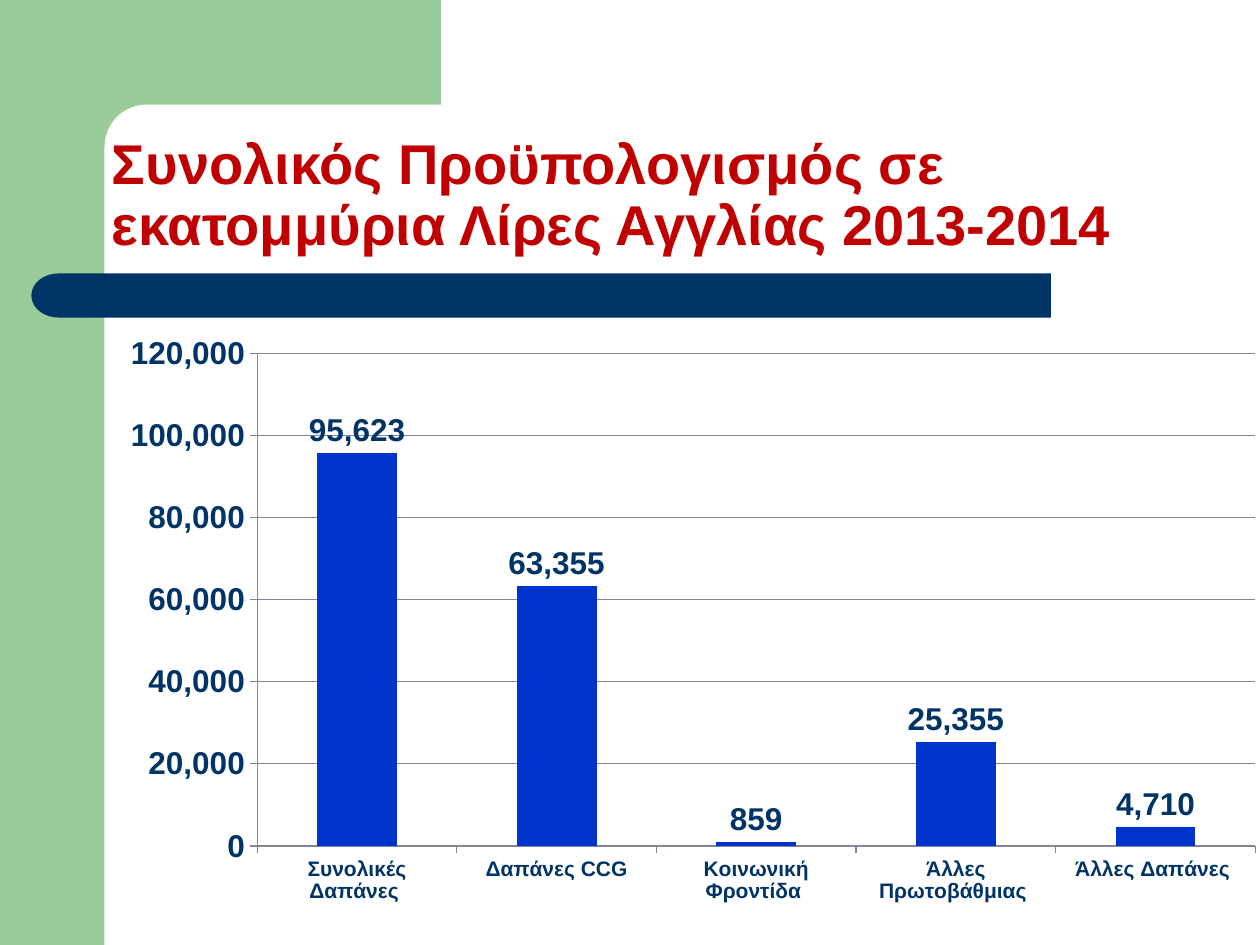
from lxml.etree import SubElement
from pptx import Presentation
from pptx.chart.data import CategoryChartData
from pptx.dml.color import RGBColor
from pptx.enum.chart import XL_CHART_TYPE, XL_LABEL_POSITION, XL_TICK_MARK
from pptx.enum.shapes import MSO_SHAPE
from pptx.enum.text import MSO_ANCHOR, PP_ALIGN
from pptx.oxml.ns import qn
from pptx.util import Inches, Pt

COLORS = {
    "green": "99CC99",
    "white": "FFFFFF",
    "navy": "003366",
    "red": "C00000",
    "blue": "0033CC",
    "gray": "83839B",
}


def tint(name):
    return RGBColor.from_string(COLORS[name])


def apply(item, **values):
    for key, value in values.items():
        setattr(item, key, value)


class Deck:
    def __init__(self, face):
        self.face = face
        self.show = Presentation()
        apply(self.show, slide_width=Inches(10), slide_height=Inches(7.5))
        self.slide = self.show.slides.add_slide(self.show.slide_layouts[6])

    def font(self, font, size, color):
        apply(font, name=self.face, size=Pt(size), bold=True)
        font.color.rgb = tint(color)

    def line(self, form):
        form.line.color.rgb = tint("gray")
        form.line.width = Pt(0.75)

    def shape(self, kind, box, color, round=None, flip=False):
        shape = self.slide.shapes.add_shape(kind, *map(Inches, box))
        shape.shadow.inherit = False
        shape.fill.solid()
        shape.fill.fore_color.rgb = tint(color)
        shape.line.fill.background()
        if round is not None:
            shape.adjustments[0] = round
        if flip:
            shape._element.spPr.xfrm.set("flipH", "1")

    def title(self, box, text):
        frame = self.slide.shapes.add_textbox(*map(Inches, box)).text_frame
        apply(frame, word_wrap=True, vertical_anchor=MSO_ANCHOR.BOTTOM)
        para = frame.paragraphs[0]
        apply(para, text=text, line_spacing=0.9, alignment=PP_ALIGN.LEFT)
        self.font(para.runs[0].font, 32, "red")

    def chart(self, box, name, names, values, plot_box):
        data = CategoryChartData(number_format="#,##0")
        data.categories = names
        data.add_series(name, values)
        frame = self.slide.shapes.add_chart(
            XL_CHART_TYPE.COLUMN_CLUSTERED, *map(Inches, box), data
        )
        chart = frame.chart
        apply(chart, has_legend=False, has_title=False)
        self.font(chart.font, 18, "navy")
        for axis, size in ((chart.category_axis, 12), (chart.value_axis, 18)):
            apply(axis, major_tick_mark=XL_TICK_MARK.OUTSIDE,
                  minor_tick_mark=XL_TICK_MARK.NONE)
            self.font(axis.tick_labels.font, size, "navy")
            self.line(axis.format)
        apply(axis, minimum_scale=0, maximum_scale=120000, major_unit=20000,
              has_major_gridlines=True)
        self.line(axis.major_gridlines.format)
        apply(axis.tick_labels, number_format="#,##0",
              number_format_is_linked=False)
        plot = chart.plots[0]
        apply(plot, gap_width=150, vary_by_categories=False)
        bars = plot.series[0]
        bars.format.fill.solid()
        bars.format.fill.fore_color.rgb = tint("blue")
        labels = bars.data_labels
        apply(labels, show_value=True, number_format="#,##0",
              number_format_is_linked=False,
              position=XL_LABEL_POSITION.OUTSIDE_END)
        self.font(labels.font, 18, "navy")
        self.layout(chart, plot_box)

    def layout(self, chart, box):
        area = chart._chartSpace.chart.plotArea
        for old in area.findall(qn("c:layout")):
            area.remove(old)
        node = SubElement(area, qn("c:layout"))
        area.insert(0, node)
        spot = SubElement(node, qn("c:manualLayout"))
        parts = [("layoutTarget", "inner"), ("xMode", "edge"), ("yMode", "edge")]
        for tag, value in parts + list(zip("xywh", box)):
            SubElement(spot, qn("c:" + tag)).set("val", str(value))

    def save(self):
        self.show.save("out.pptx")


def main():
    deck = Deck("Arial")
    deck.shape(MSO_SHAPE.RECTANGLE, (0, 0, 0.83, 7.5), "green")
    deck.shape(MSO_SHAPE.RECTANGLE, (0.75, 0, 2.75, 1.17), "green")
    deck.shape(MSO_SHAPE.ROUNDED_RECTANGLE, (0.83, 0.83, 5.58, 0.67), "white", 0.5)
    deck.shape(MSO_SHAPE.ROUNDED_RECTANGLE, (0.67, 2.17, 7.67, 0.35), "navy", 0)
    deck.shape(MSO_SHAPE.FLOWCHART_DELAY, (0.25, 2.17, 0.43, 0.35), "navy", flip=True)
    deck.title((0.79, 0.84, 9.21, 1.25),
               "Συνολικός Προϋπολογισμός σε εκατομμύρια Λίρες Αγγλίας 2013-2014")
    deck.chart(
        (0.83, 2.57, 9.32, 4.71),
        "Series 1",
        ["Συνολικές Δαπάνες ", "Δαπάνες CCG", "Κοινωνική Φροντίδα ",
         "Άλλες Πρωτοβάθμιας ", "Άλλες Δαπάνες "],
        [95623, 63355, 859, 25355, 4710],
        (0.13, 0.05, 0.85, 0.83),
    )
    deck.save()


if __name__ == "__main__":
    main()
